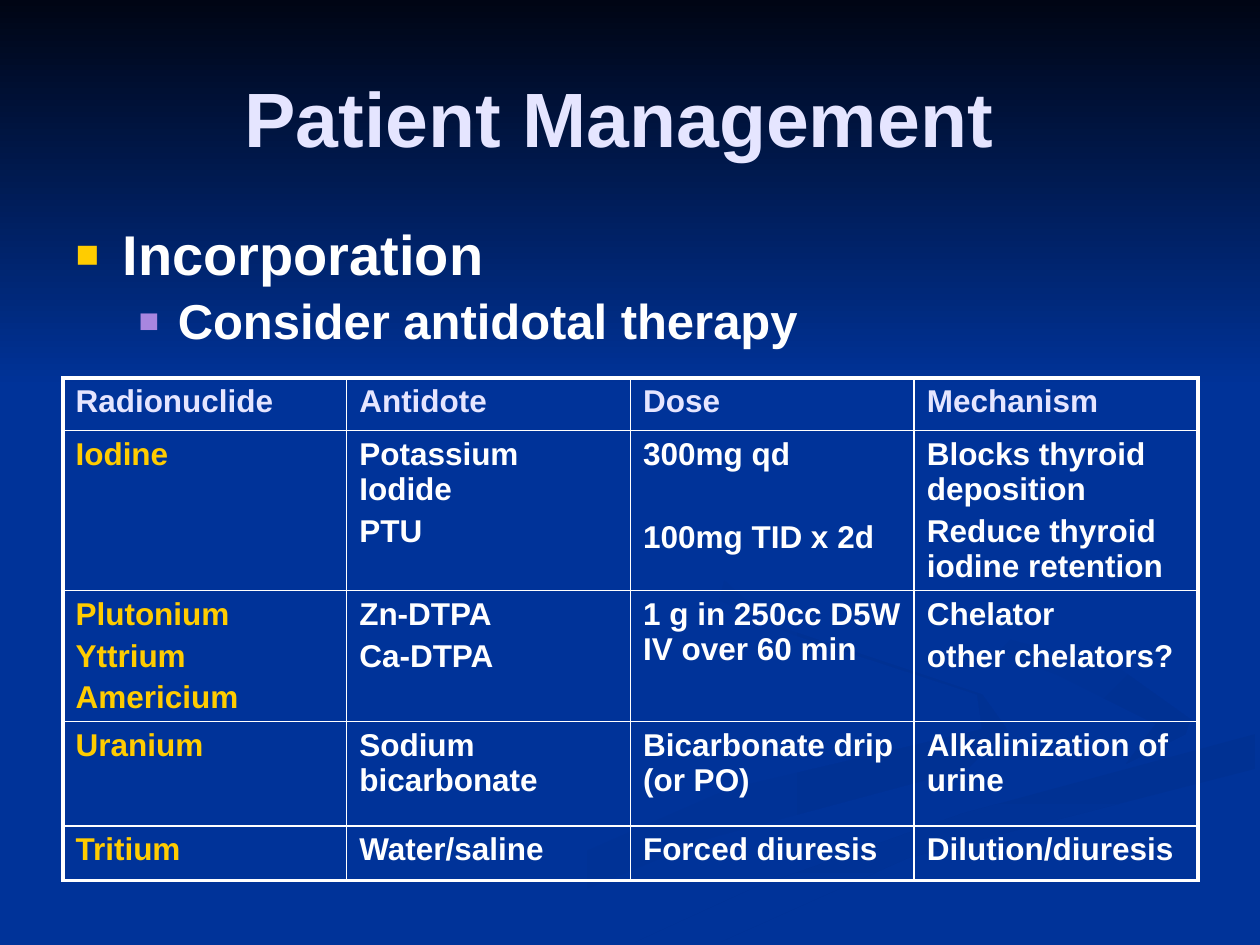
"""Build the patient management slide with its table of radionuclide antidotes."""
import dataclasses

import lxml.etree
import pptx
import pptx.dml.color
import pptx.enum.shapes
import pptx.enum.text
import pptx.oxml
import pptx.oxml.ns
import pptx.util

Cm = pptx.util.Cm
Pt = pptx.util.Pt
FONT = "Arial"
COLOURS = {
    "background": "003399", "night": "000514", "swoosh": "003193",
    "lavender": "E5E5FF", "white": "FFFFFF", "gold": "FFCC00", "violet": "A886E0",
}


@dataclasses.dataclass(frozen=True)
class Swoosh:
    """A background ribbon, outlined in millimetres."""
    points: tuple
    start: str
    end: str
    angle: int


@dataclasses.dataclass(frozen=True)
class Bullet:
    """A list line with its indents in centimetres."""
    text: str
    level: int
    size: int
    left: float
    hanging: float
    colour: str


@dataclasses.dataclass(frozen=True)
class Line:
    """A table line with the space before it in points."""
    text: str
    space_before: float = 3.6


SWOOSHES = (
    Swoosh(((198, 140), (156, 126), (146, 117), (145, 121), (160, 128), (197, 140),
            (198, 147), (147, 159), (76, 190), (92, 190), (143, 169), (195, 155), (203, 147)),
           "background", "swoosh", 0),
    Swoosh(((240, 145), (226, 135), (189, 125), (184, 118), (189, 127), (213, 136),
            (233, 146), (227, 154), (239, 148)), "background", "swoosh", 45),
    Swoosh(((128, 190), (145, 190), (183, 173), (253, 155), (253, 148), (194, 164),
            (152, 179)), "swoosh", "background", 90),
)
BULLETS = (
    Bullet("Incorporation", 0, 32, 0.95, 0.95, "gold"),
    Bullet("Consider antidotal therapy", 1, 28, 2.06, 0.79, "violet"),
)
COLUMN_WIDTH = 5.72
ROW_HEIGHTS = (1.06, 3.22, 2.64, 2.1, 1.1)
TABLE_ROWS = (
    (("Radionuclide",), ("Antidote",), ("Dose",), ("Mechanism",)),
    (("Iodine",), ("Potassium Iodide", "PTU"),
     ("300mg qd", Line("100mg TID x 2d", 27)),
     ("Blocks thyroid deposition", "Reduce thyroid iodine retention")),
    (("Plutonium", "Yttrium", "Americium"), ("Zn-DTPA", "Ca-DTPA"),
     ("1 g in 250cc D5W IV over 60 min",), ("Chelator", "other chelators?")),
    (("Uranium",), ("Sodium bicarbonate",), ("Bicarbonate drip (or PO)",),
     ("Alkalinization of urine",)),
    (("Tritium",), ("Water/saline",), ("Forced diuresis",), ("Dilution/diuresis",)),
)


def rgb(name: str) -> pptx.dml.color.RGBColor:
    """Return a named colour."""
    return pptx.dml.color.RGBColor.from_string(COLOURS[name])


def add_element(parent, tag: str, **attributes):
    """Append a drawing element to its parent."""
    return lxml.etree.SubElement(parent, pptx.oxml.ns.qn(tag), attributes)


def add_text(paragraph, text: str, size: int, colour: str) -> None:
    """Add one bold run."""
    run = paragraph.add_run()
    run.text = text
    run.font.name = FONT
    run.font.size = Pt(size)
    run.font.bold = True
    run.font.color.rgb = rgb(colour)


def paint_gradient(shape, start: str, end: str, angle: int) -> None:
    """Fill a shape with a clockwise-angled gradient and no outline."""
    shape.shadow.inherit = False
    shape.line.fill.background()
    shape.fill.gradient()
    shape.fill.gradient_angle = (360 - angle) % 360
    for stop, colour, position in zip(shape.fill.gradient_stops, (start, end), (0, 1)):
        stop.color.rgb = rgb(colour)
        stop.position = position


def draw_background(slide) -> None:
    """Draw the dark sky and the ribbons."""
    slide.background.fill.solid()
    slide.background.fill.fore_color.rgb = rgb("background")
    sky = slide.shapes.add_shape(
        pptx.enum.shapes.MSO_SHAPE.RECTANGLE, 0, 0, Cm(25.4), Cm(7.82))
    paint_gradient(sky, "night", "background", 90)
    for swoosh in SWOOSHES:
        builder = slide.shapes.build_freeform(*swoosh.points[0], scale=Cm(0.1))
        builder.add_line_segments(swoosh.points[1:], close=True)
        paint_gradient(builder.convert_to_shape(), swoosh.start, swoosh.end, swoosh.angle)


def place(slide, shape, left: float, top: float, width: float, height: float) -> None:
    """Position a placeholder in front of everything drawn so far."""
    shape.left, shape.top, shape.width, shape.height = map(Cm, (left, top, width, height))
    shape.text_frame.word_wrap = True
    shape.text_frame.auto_size = pptx.enum.text.MSO_AUTO_SIZE.NONE
    slide.shapes._spTree.append(shape._element)


def write_title(slide) -> None:
    """Write the slide title."""
    title = slide.shapes.title
    place(slide, title, 1.27, 0.76, 22.86, 3.18)
    title.text_frame.vertical_anchor = pptx.enum.text.MSO_ANCHOR.MIDDLE
    paragraph = title.text_frame.paragraphs[0]
    paragraph.alignment = pptx.enum.text.PP_ALIGN.CENTER
    add_text(paragraph, "Patient Management ", 44, "lavender")


def write_bullets(slide) -> None:
    """Write the bulleted list."""
    body = slide.placeholders[1]
    place(slide, body, 1.27, 4.45, 22.86, 12.5)
    frame = body.text_frame
    for index, bullet in enumerate(BULLETS):
        paragraph = frame.add_paragraph() if index else frame.paragraphs[0]
        paragraph.level = bullet.level
        paragraph.line_spacing = 0.9
        paragraph.space_before = Pt(bullet.size * 0.2)
        properties = paragraph._p.get_or_add_pPr()
        properties.set("marL", str(Cm(bullet.left)))
        properties.set("indent", str(-Cm(bullet.hanging)))
        add_element(add_element(properties, "a:buClr"), "a:srgbClr", val=COLOURS[bullet.colour])
        add_element(properties, "a:buSzPct", val="70000")
        add_element(properties, "a:buFont", typeface=FONT)
        add_element(properties, "a:buChar", char="■")
        add_text(paragraph, bullet.text, bullet.size, "white")


def format_cell(cell, outer_edges: dict[str, bool]) -> None:
    """Give a cell white borders, heavier on the table's outside, and no fill."""
    properties = cell._tc.get_or_add_tcPr()
    for edge, is_outer in outer_edges.items():
        border = add_element(properties, f"a:ln{edge}", w=str(Pt(2.25 if is_outer else 1)))
        add_element(add_element(border, "a:solidFill"), "a:srgbClr", val=COLOURS["white"])
    cell.fill.background()


def draw_table(slide) -> None:
    """Draw the antidote table."""
    row_count, column_count = len(TABLE_ROWS), len(TABLE_ROWS[0])
    table = slide.shapes.add_table(
        row_count, column_count, Cm(1.27), Cm(7.62),
        Cm(COLUMN_WIDTH * column_count), Cm(sum(ROW_HEIGHTS))).table
    table.first_row = table.horz_banding = False
    for column in table.columns:
        column.width = Cm(COLUMN_WIDTH)
    for row_index, row in enumerate(TABLE_ROWS):
        table.rows[row_index].height = Cm(ROW_HEIGHTS[row_index])
        for column_index, entries in enumerate(row):
            cell = table.cell(row_index, column_index)
            format_cell(cell, {"L": column_index == 0, "R": column_index == column_count - 1,
                               "T": row_index == 0, "B": row_index == row_count - 1})
            colour = "lavender" if row_index == 0 else "white" if column_index else "gold"
            for index, entry in enumerate(entries):
                line = entry if isinstance(entry, Line) else Line(entry)
                frame = cell.text_frame
                paragraph = frame.add_paragraph() if index else frame.paragraphs[0]
                paragraph.space_before = Pt(line.space_before)
                add_text(paragraph, line.text, 18, colour)


def main() -> None:
    """Build and save the presentation."""
    presentation = pptx.Presentation()
    presentation.slide_width, presentation.slide_height = Cm(25.4), Cm(19.05)
    slide = presentation.slides.add_slide(presentation.slide_layouts[1])
    draw_background(slide)
    write_title(slide)
    write_bullets(slide)
    draw_table(slide)
    presentation.save("out.pptx")


if __name__ == "__main__":
    main()
